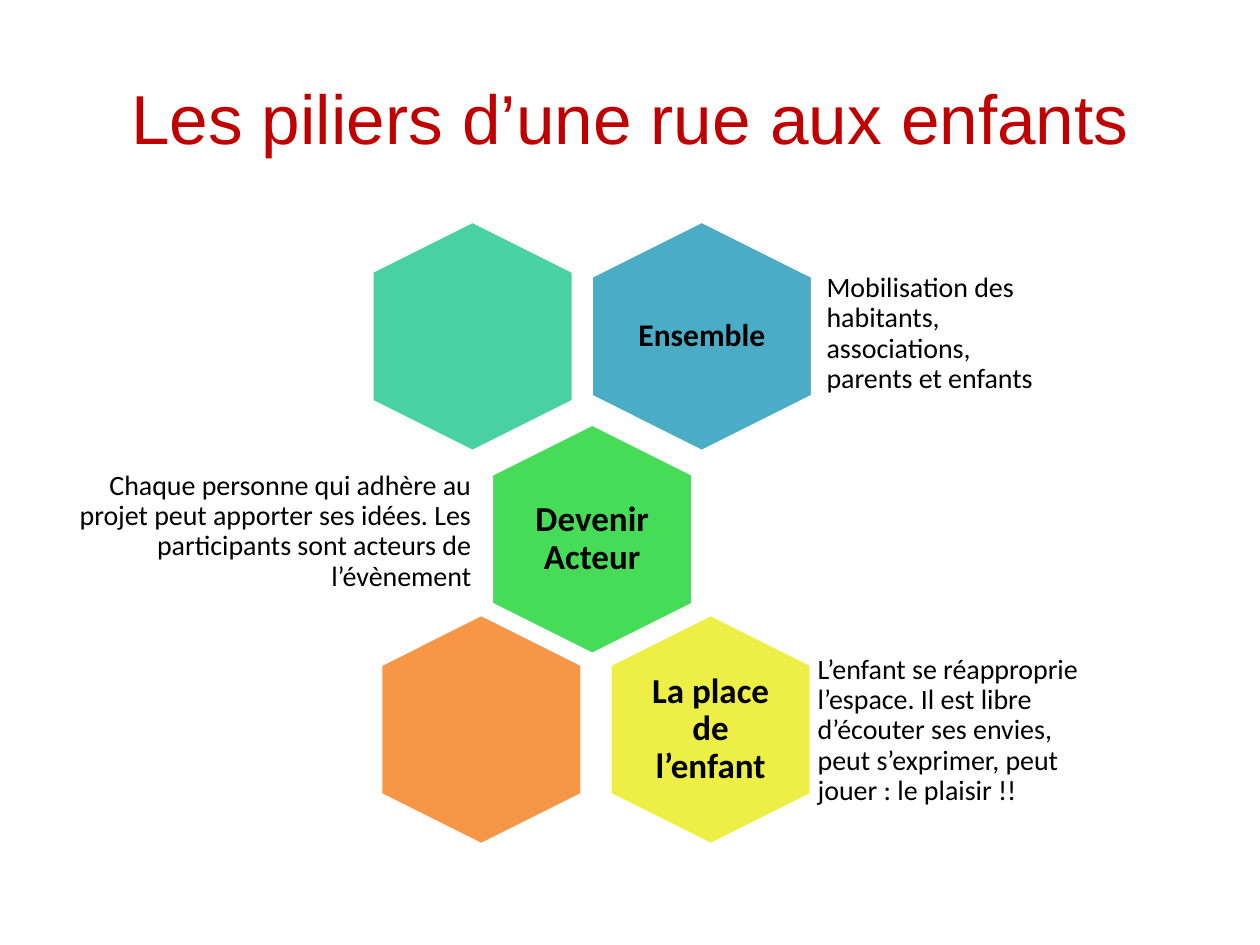
"""Build the slide on the pillars of a children's street: a honeycomb with notes."""
from pptx import Presentation
from pptx.dml.color import RGBColor
from pptx.enum.shapes import MSO_SHAPE
from pptx.enum.text import MSO_ANCHOR, PP_ALIGN
from pptx.util import Inches, Pt

TITLE = "Les piliers d’une rue aux enfants"
PILLARS = [
    dict(row=0, column=1, color="together", span=1.76, label="Ensemble", label_size="small_label",
         label_width=1.19, note_width=1.89, note_gap=0.04, note_shift=-0.02,
         note="Mobilisation des habitants, associations, parents et enfants"),
    dict(row=0, column=0, color="mint"),
    dict(row=1, column=0, color="actor", label="Devenir Acteur",
         note_width=3.31, note_gap=0.09, note_shift=-0.06, note_on_left=True,
         note="Chaque personne qui adhère au projet peut apporter ses idées. "
              "Les participants sont acteurs de l’évènement"),
    dict(row=2, column=1, color="child", label="La place de l’enfant",
         note_width=2.36, note_gap=-0.02, note_shift=0.01,
         note="L’enfant se réapproprie l’espace. Il est libre d’écouter ses envies, "
              "peut s’exprimer, peut jouer : le plaisir !!"),
    dict(row=2, column=0, color="orange"),
]

THEME = dict(
    colors=dict(title="C00000", text="000000", outline="FFFFFF", together="4BACC6",
                mint="49D1A3", actor="47DC57", child="EEEF46", orange="F79646"),
    sizes=dict(title=39.6, label=20, small_label=18, note=16),
    fonts=dict(title="Arial", body="Calibri"),
)

SLIDE_WIDTH, SLIDE_HEIGHT = 10, 7.5
ROW_STARTS = [(3.75, 2.67), (4.7, 4.28), (3.82, 5.79)]
COLUMN_STEP = 1.82
HEX_HEIGHT, HEX_SPAN = 1.83, 1.6
LABEL_WIDTH, LABEL_HEIGHT, NOTE_HEIGHT = 1.1, 1.26, 1.1


def color(name):
    return RGBColor.from_string(THEME["colors"][name])


def write(frame, text, size="note", font="body", ink="text", bold=False,
          align=PP_ALIGN.LEFT, line_spacing=0.9, inset=0.07):
    frame.word_wrap = True
    frame.vertical_anchor = MSO_ANCHOR.MIDDLE
    frame.margin_left = frame.margin_right = Inches(inset)
    frame.margin_top = frame.margin_bottom = Inches(inset)
    paragraph = frame.paragraphs[0]
    paragraph.alignment = align
    paragraph.line_spacing = line_spacing
    run = paragraph.add_run()
    run.text = text
    run.font.size = Pt(THEME["sizes"][size])
    run.font.name = THEME["fonts"][font]
    run.font.color.rgb = color(ink)
    run.font.bold = bold


def centered(x, y, width, height):
    return [Inches(v) for v in (x - width / 2, y - height / 2, width, height)]


def add_hexagon(slide, x, y, span, fill):
    hexagon = slide.shapes.add_shape(MSO_SHAPE.HEXAGON, *centered(x, y, HEX_HEIGHT, span))
    hexagon.rotation = 90
    hexagon.adjustments[0] = 0.25
    hexagon.shadow.inherit = False
    hexagon.fill.solid()
    hexagon.fill.fore_color.rgb = color(fill)
    hexagon.line.color.rgb = color("outline")
    hexagon.line.width = Pt(2)


def add_pillar(slide, pillar):
    start, y = ROW_STARTS[pillar["row"]]
    x = start + pillar["column"] * COLUMN_STEP
    span = pillar.get("span", HEX_SPAN)
    add_hexagon(slide, x, y, span, pillar["color"])
    if "label" not in pillar:
        return
    label = slide.shapes.add_textbox(
        *centered(x, y, pillar.get("label_width", LABEL_WIDTH), LABEL_HEIGHT))
    write(label.text_frame, pillar["label"], size=pillar.get("label_size", "label"),
          bold=True, align=PP_ALIGN.CENTER, inset=0.08)
    on_left = pillar.get("note_on_left", False)
    offset = span / 2 + pillar["note_gap"] + pillar["note_width"] / 2
    note_x = x - offset if on_left else x + offset
    note = slide.shapes.add_textbox(
        *centered(note_x, y + pillar["note_shift"], pillar["note_width"], NOTE_HEIGHT))
    write(note.text_frame, pillar["note"], align=PP_ALIGN.RIGHT if on_left else PP_ALIGN.LEFT)


def main():
    deck = Presentation()
    deck.slide_width, deck.slide_height = Inches(SLIDE_WIDTH), Inches(SLIDE_HEIGHT)
    slide = deck.slides.add_slide(deck.slide_layouts[5])
    title = slide.shapes.title
    title.left, title.top, title.width, title.height = [
        Inches(v) for v in (SLIDE_WIDTH * 0.05, SLIDE_HEIGHT * 0.04, SLIDE_WIDTH * 0.9, 1.25)]
    write(title.text_frame, TITLE, size="title", font="title", ink="title",
          align=PP_ALIGN.CENTER, line_spacing=1.0)
    for pillar in PILLARS:
        add_pillar(slide, pillar)
    deck.save("out.pptx")


if __name__ == "__main__":
    main()
